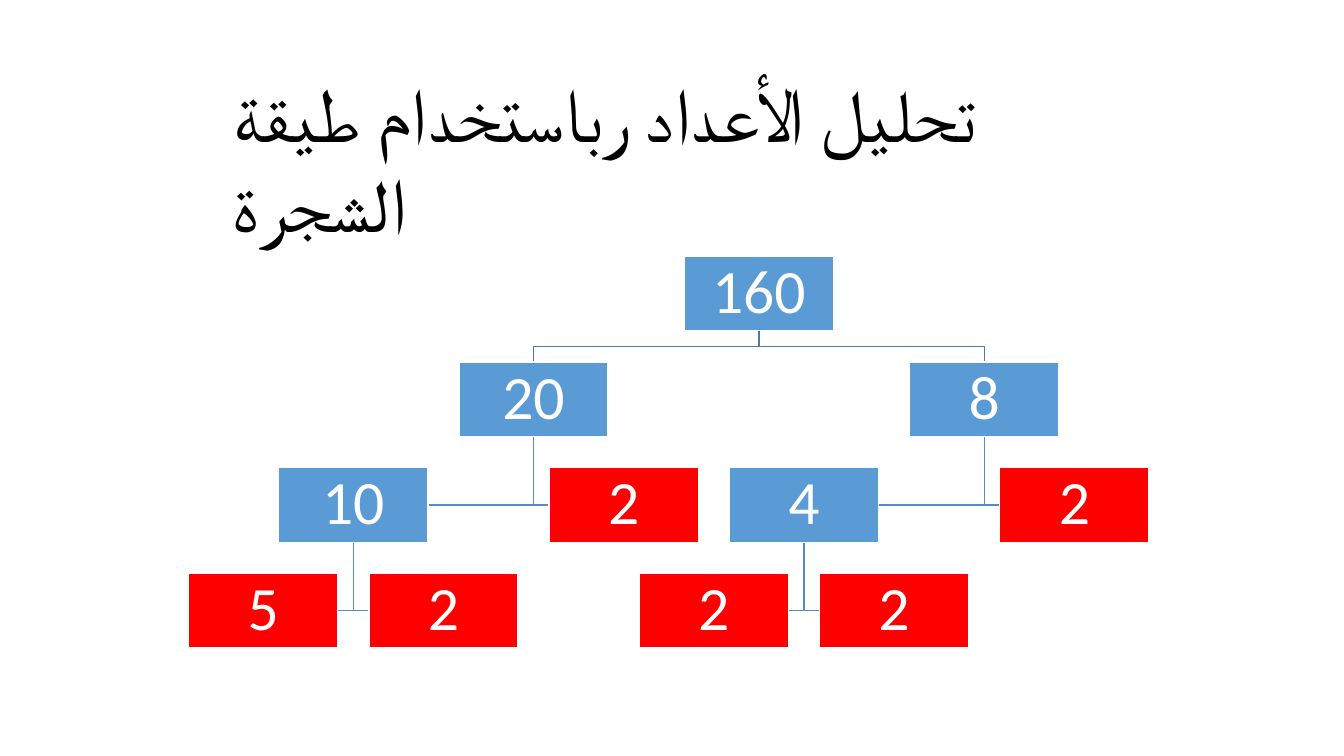
from lxml.etree import SubElement
from pptx import Presentation
from pptx.dml.color import RGBColor
from pptx.enum.shapes import MSO_SHAPE
from pptx.enum.text import MSO_ANCHOR, MSO_AUTO_SIZE, PP_ALIGN
from pptx.oxml.ns import qn
from pptx.util import Inches, Pt

COLORS = {
    "composite": "5B9BD5",
    "prime": "FF0000",
    "root_branch": "497CAB",
    "branch": "538DC1",
    "white": "FFFFFF",
    "black": "000000",
}
FONT = "Calibri"
BOX_WIDTH, BOX_HEIGHT = 1.48, 0.74
FIRST_CENTER, COLUMN_STEP = 2.61, 0.894
FIRST_TOP, ROW_STEP = 2.54, 1.05

NODES = {
    "root": ("160", 5.5, 0, "composite", None),
    "left": ("20", 3, 1, "composite", "root"),
    "left_ten": ("10", 1, 2, "composite", "left"),
    "left_five": ("5", 0, 3, "prime", "left_ten"),
    "left_ten_two": ("2", 2, 3, "prime", "left_ten"),
    "left_two": ("2", 4, 2, "prime", "left"),
    "right": ("8", 8, 1, "composite", "root"),
    "right_four": ("4", 6, 2, "composite", "right"),
    "right_four_two": ("2", 5, 3, "prime", "right_four"),
    "right_four_other": ("2", 7, 3, "prime", "right_four"),
    "right_two": ("2", 9, 2, "prime", "right"),
}


def place(name):
    column, row = NODES[name][1:3]
    return FIRST_CENTER + column * COLUMN_STEP, FIRST_TOP + row * ROW_STEP


def style_text(paragraph, size, color):
    paragraph.font.size = Pt(size)
    for span in paragraph.runs:
        span.font.name = FONT
        span.font.size = Pt(size)
        span.font.color.rgb = RGBColor.from_string(COLORS[color])


deck = Presentation()
deck.slide_width, deck.slide_height = Inches(13.33), Inches(7.5)
page = deck.slides.add_slide(deck.slide_layouts[5])

title = page.shapes.title
title.left, title.top = Inches(2.22), Inches(0.61)
title.width, title.height = Inches(9.17), Inches(1.01)
frame = title.text_frame
frame.text = "تحليل الأعداد رباستخدام طيقة الشجرة"
frame.word_wrap = True
frame.auto_size = MSO_AUTO_SIZE.NONE
frame.vertical_anchor = MSO_ANCHOR.TOP
heading = frame.paragraphs[0]
heading.alignment = PP_ALIGN.LEFT
style_text(heading, 54, "black")
SubElement(heading.runs[0].font._element, qn("a:cs"), typeface=FONT)

for name, (number, column, row, kind, parent) in NODES.items():
    if parent is None:
        continue
    center, top = place(name)
    parent_center, parent_top = place(parent)
    start = parent_top + BOX_HEIGHT
    if parent == "root":
        middle = (start + top) / 2
        bends = [(parent_center, middle), (center, middle), (center, top)]
        color = "root_branch"
    else:
        middle = top + BOX_HEIGHT / 2
        side = BOX_WIDTH / 2 if center < parent_center else -BOX_WIDTH / 2
        bends = [(parent_center, middle), (center + side, middle)]
        color = "branch"
    builder = page.shapes.build_freeform(Inches(parent_center), Inches(start))
    builder.add_line_segments([(Inches(x), Inches(y)) for x, y in bends], close=False)
    branch = builder.convert_to_shape()
    branch.shadow.inherit = False
    branch.fill.background()
    branch.line.color.rgb = RGBColor.from_string(COLORS[color])
    branch.line.width = Pt(1)

for name, (number, column, row, kind, parent) in NODES.items():
    center, top = place(name)
    box = page.shapes.add_shape(
        MSO_SHAPE.RECTANGLE, Inches(center - BOX_WIDTH / 2), Inches(top),
        Inches(BOX_WIDTH), Inches(BOX_HEIGHT))
    box.shadow.inherit = False
    box.fill.solid()
    box.fill.fore_color.rgb = RGBColor.from_string(COLORS[kind])
    box.line.color.rgb = RGBColor.from_string(COLORS["white"])
    box.line.width = Pt(1)
    frame = box.text_frame
    frame.margin_left = frame.margin_right = Inches(0.03)
    frame.margin_top = frame.margin_bottom = Inches(0.03)
    frame.vertical_anchor = MSO_ANCHOR.MIDDLE
    frame.text = number
    label = frame.paragraphs[0]
    label.alignment = PP_ALIGN.CENTER
    label.line_spacing = 0.9
    style_text(label, 44, "white")

deck.save("out.pptx")
